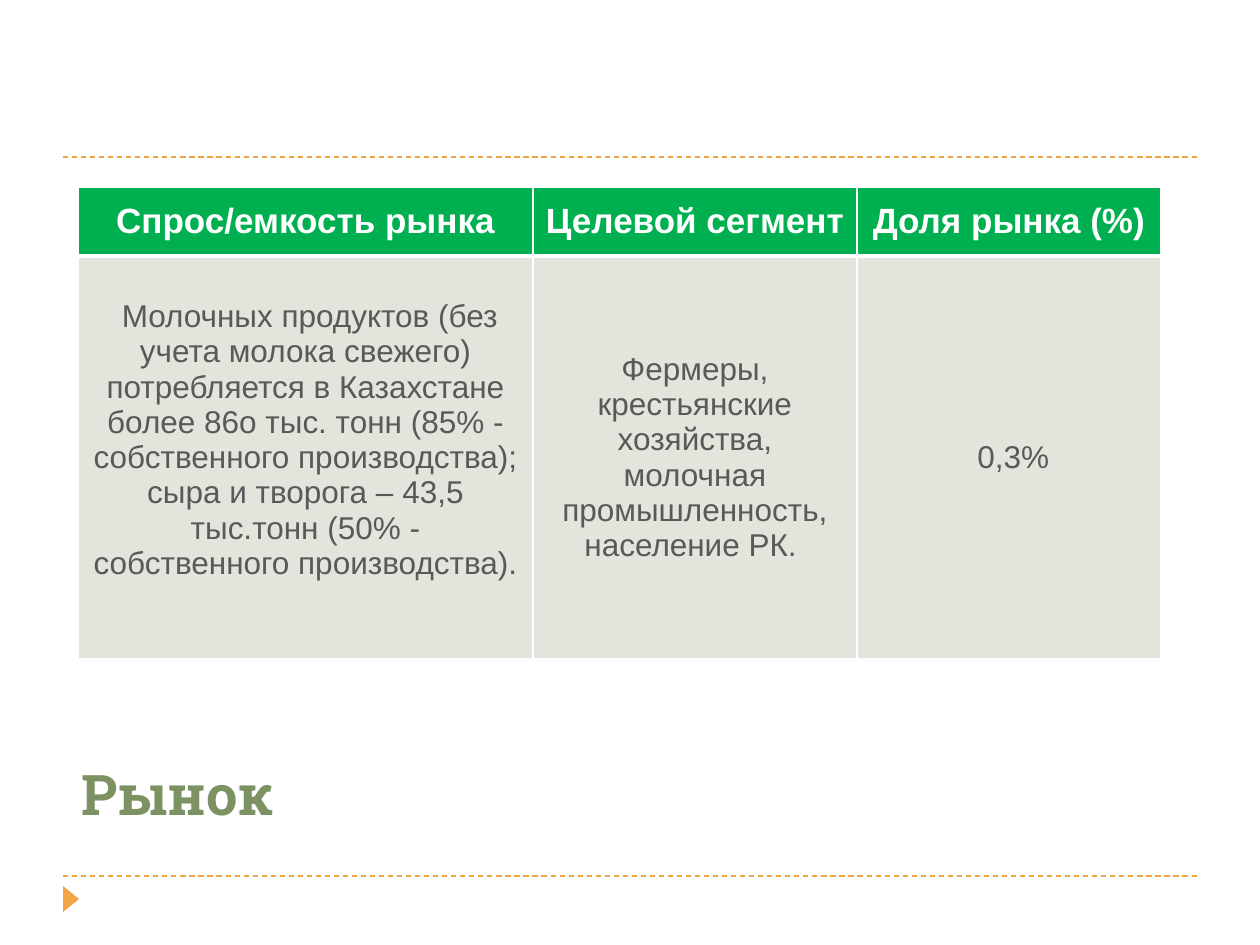
from lxml.etree import SubElement
from pptx import Presentation
from pptx.dml.color import RGBColor
from pptx.enum.dml import MSO_LINE
from pptx.enum.shapes import MSO_CONNECTOR, MSO_SHAPE
from pptx.enum.text import MSO_ANCHOR, PP_ALIGN
from pptx.oxml import parse_xml
from pptx.oxml.ns import nsdecls, qn
from pptx.util import Emu, Pt

SCALE = 914400 / 126
COLORS = {
    "accent": "F3A447",
    "title": "7D9263",
    "header": "00B050",
    "body": "E1E5DC",
    "text": "595959",
    "white": "FFFFFF",
}
COLUMN_WIDTHS = [455, 324, 304]
ROW_HEIGHTS = [69, 403]
MARKET = [
    ["Спрос/емкость рынка", "Целевой сегмент", "Доля рынка (%)"],
    [
        " Молочных продуктов (без учета молока свежего) потребляется в Казахстане "
        "более 86о тыс. тонн (85% - собственного производства); сыра и творога – 43,5 "
        "тыс.тонн (50% - собственного производства). ",
        "Фермеры, крестьянские хозяйства, молочная промышленность, население РК. ",
        " 0,3%",
    ],
]


def px(length):
    """Turn pixels into EMU."""
    return Emu(round(length * SCALE))


def color(name):
    """Return a palette colour."""
    return RGBColor.from_string(COLORS[name])


def format_text(text_frame, font_name, size, color_name, bold):
    """Format every run of a text frame."""
    for paragraph in text_frame.paragraphs:
        for run in paragraph.runs:
            run.font.name = font_name
            run.font.size = Pt(size)
            run.font.bold = bold
            run.font.color.rgb = color(color_name)


def add_rule(slide, left, top, width):
    """Draw a dashed horizontal rule."""
    rule = slide.shapes.add_connector(
        MSO_CONNECTOR.STRAIGHT, px(left), px(top), px(left + width), px(top))
    rule.line.color.rgb = color("accent")
    rule.line.width = Pt(0.75)
    rule.line.dash_style = MSO_LINE.DASH
    SubElement(rule._element.spPr, qn("a:effectLst"))


def add_frame(slide, left, top, width, height):
    """Draw the two rules and the footer arrow of the slide frame."""
    add_rule(slide, left, top + height, width)
    add_rule(slide, left, top, width)
    arrow = slide.shapes.add_shape(
        MSO_SHAPE.ISOSCELES_TRIANGLE, px(left - 5), px(top + height + 15), px(26), px(16))
    arrow.rotation = 90
    arrow.shadow.inherit = False
    arrow.fill.solid()
    arrow.fill.fore_color.rgb = color("accent")
    arrow.line.fill.background()


def add_title(slide, left, top, width, height):
    """Place the slide title at the bottom of its box."""
    text_frame = slide.shapes.add_textbox(px(left), px(top), px(width), px(height)).text_frame
    text_frame.word_wrap = True
    text_frame.vertical_anchor = MSO_ANCHOR.BOTTOM
    text_frame.text = "Рынок"
    format_text(text_frame, "Roboto Slab", 32, "title", True)


def set_borders(cell, top_width, bottom_width):
    """Give a cell white borders."""
    properties = cell._tc.get_or_add_tcPr()
    widths = {"lnL": 1, "lnR": 1, "lnT": top_width, "lnB": bottom_width}
    for index, (side, width) in enumerate(widths.items()):
        properties.insert(index, parse_xml(
            f'<a:{side} {nsdecls("a")} w="{Pt(width)}"><a:solidFill>'
            f'<a:srgbClr val="{COLORS["white"]}"/></a:solidFill></a:{side}>'))


def add_market_table(slide, left, top):
    """Place the market table."""
    table = slide.shapes.add_table(
        len(ROW_HEIGHTS), len(COLUMN_WIDTHS), px(left), px(top),
        px(sum(COLUMN_WIDTHS)), px(sum(ROW_HEIGHTS))).table
    for column, width in zip(table.columns, COLUMN_WIDTHS):
        column.width = px(width)
    for row, height, texts in zip(table.rows, ROW_HEIGHTS, MARKET):
        row.height = px(height)
        is_header = texts is MARKET[0]
        for cell, text in zip(row.cells, texts):
            cell.text_frame.text = text
            cell.text_frame.paragraphs[0].alignment = PP_ALIGN.CENTER
            cell.vertical_anchor = MSO_ANCHOR.MIDDLE
            cell.fill.solid()
            cell.fill.fore_color.rgb = color("header" if is_header else "body")
            if is_header:
                format_text(cell.text_frame, "Arial", 20, "white", True)
                set_borders(cell, 1, 3)
            else:
                format_text(cell.text_frame, "Arial", 18, "text", False)
                set_borders(cell, 3, 1)
    table.cell(1, 0).margin_bottom = px(41)


def main():
    """Build and save the presentation."""
    presentation = Presentation()
    presentation.slide_width = px(1260)
    presentation.slide_height = px(945)
    slide = presentation.slides.add_slide(presentation.slide_layouts[6])
    add_frame(slide, 63, 157, 1134, 719)
    add_title(slide, 69, 718, 1128, 115)
    add_market_table(slide, 78, 187)
    presentation.save("out.pptx")


if __name__ == "__main__":
    main()
